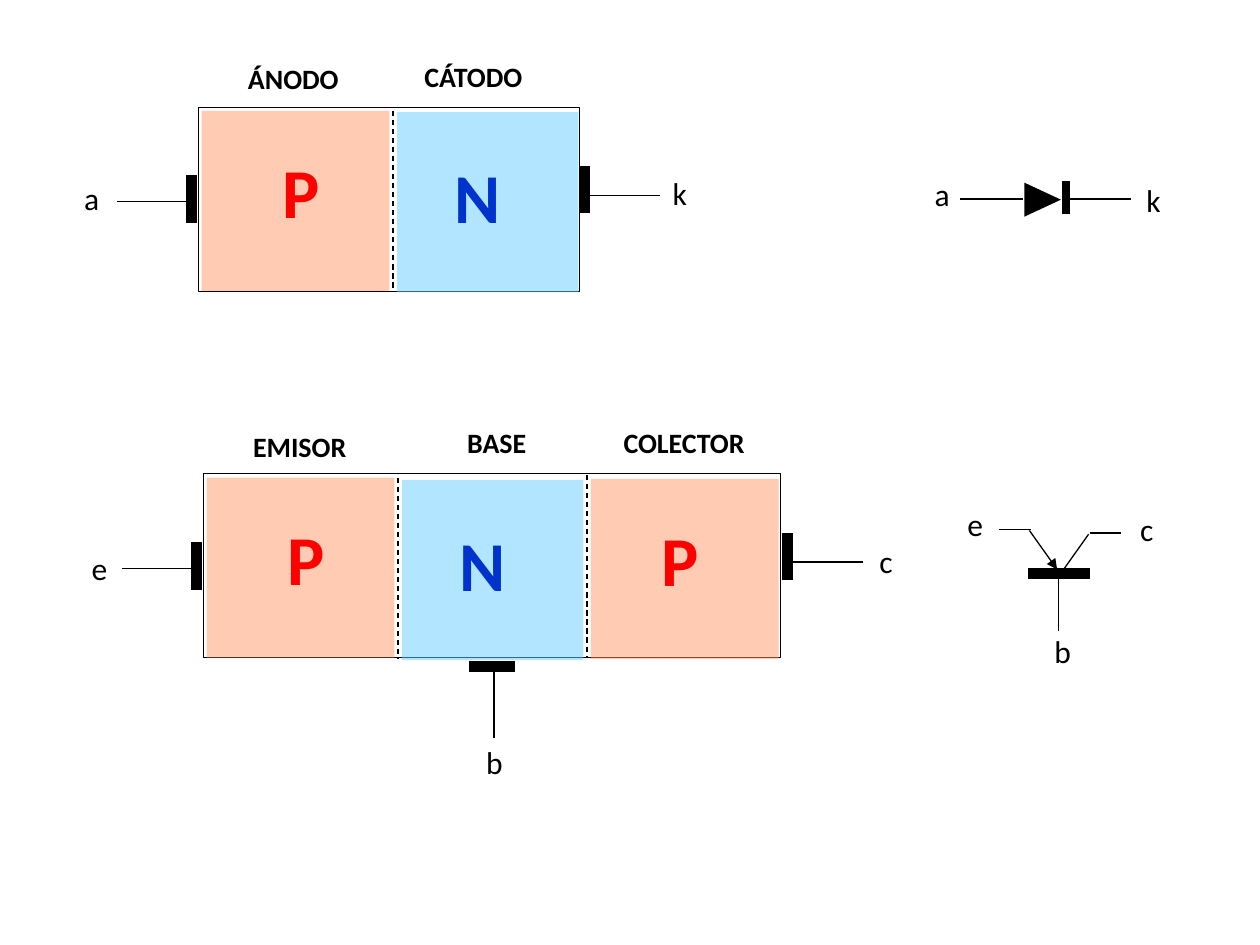
import pptx
import pptx.util
import pptx.dml.color
import pptx.enum.dml
import pptx.enum.shapes
import pptx.enum.text
import pptx.oxml.ns
import lxml.etree

SCALE = 9144  # EMU per px, 100 px to the inch
FONT = "Calibri"
INK = {"black": "000000", "red": "FF0000", "blue": "0033CC",
       "peach": "FF9966", "sky": "66CCFF"}
# Fill, letter colour and letter box width of each doping
KINDS = {"P": ("peach", "red", 50), "N": ("sky", "blue", 57)}
HEIGHTS = {16: 37, 18: 40, 40: 77}  # text box height by point size
KIND = pptx.enum.shapes.MSO_SHAPE


def px(*nums):
    return [pptx.util.Emu(round(n * SCALE)) for n in nums]


def rgb(name):
    return pptx.dml.color.RGBColor.from_string(INK[name])


def tag(node, name, **attrs):
    return lxml.etree.SubElement(node, pptx.oxml.ns.qn(name), **attrs)


def wire(group, x1, y1, x2, y2, width=0.75, dash=False, head=False):
    link = group.shapes.add_connector(
        pptx.enum.shapes.MSO_CONNECTOR.STRAIGHT, *px(x1, y1, x2, y2))
    link.line.width = pptx.util.Pt(width)
    link.line.color.rgb = rgb("black")
    if dash:
        link.line.dash_style = pptx.enum.dml.MSO_LINE.DASH
    if head:
        tag(link.line._get_or_add_ln(), "a:headEnd", type="triangle")
    tag(link._element.spPr, "a:effectLst")


def area(group, x, y, w, h, fill=None, alpha=None, kind=KIND.RECTANGLE):
    shape = group.shapes.add_shape(kind, *px(x, y, w, h))
    shape.shadow.inherit = False
    if fill:
        shape.fill.solid()
        shape.fill.fore_color.rgb = rgb(fill)
        shape.line.fill.background()
        if alpha:
            node = shape._element.spPr.find(".//" + pptx.oxml.ns.qn("a:srgbClr"))
            tag(node, "a:alpha", val=str(alpha * 1000))
    else:
        shape.fill.background()
        shape.line.color.rgb = rgb("black")
        shape.line.width = pptx.util.Pt(0.25)
    return shape


def label(group, x, y, w, text, size=18, color="black", bold=False, wrap=False):
    box = group.shapes.add_textbox(*px(x, y, w, HEIGHTS[size]))
    frame = box.text_frame
    frame.word_wrap = wrap
    frame.auto_size = pptx.enum.text.MSO_AUTO_SIZE.SHAPE_TO_FIT_TEXT
    run = frame.paragraphs[0].add_run()
    run.text = text
    run.font.name = FONT
    run.font.size = pptx.util.Pt(size)
    run.font.bold = bold
    run.font.color.rgb = rgb(color)


def block(group, box, zones, joints, left, right, gap):
    """Doped block with its zones, joints and two side contacts."""
    x, y, w, h = box
    area(group, x, y, w, h)

    # Joints between zones
    for dx, dy in joints:
        wire(group, x + dx, y + dy, x + dx, y + dy + 144, dash=True)

    # Zones, each with a title above and a letter inside
    for kind, dx, dy, zw, inset, title, tx, ty, tw in zones:
        fill, color, lw = KINDS[kind]
        label(group, x + tx, y + ty, tw, title, 16, bold=True)
        area(group, x + dx, y + dy, zw, 143, fill, 50)
        label(group, x + dx + inset, y + dy + (28 if kind == "N" else 25),
              lw, kind, 40, color, True)

    # Left contact
    wire(group, x - 5, y + 92, x - 5, y + 54, 6)
    wire(group, x - 64, y + 75, x - 4, y + 75)
    text, dx, dy = left
    label(group, x + dx, y + dy, 24, text, wrap=True)

    # Right contact
    edge = x + w + gap
    wire(group, edge, y + 84, edge, y + 47, 6)
    wire(group, edge + 1, y + 70, edge + 60, y + 70)
    text, dx, dy = right
    label(group, x + w + dx, y + dy, 32, text)


def stem(group, x, y):
    """Base contact below the transistor block."""
    wire(group, x - 20, y, x + 17, y, 6)
    wire(group, x, y + 57, x, y - 3)
    label(group, x - 16, y + 56, 34, "b")


def diode(group, x, y):
    """Diode symbol, its lead starting at x, y."""
    wire(group, x, y, x + 50, y)
    area(group, x + 52, y - 14, 27, 29, "black",
         kind=KIND.ISOSCELES_TRIANGLE).rotation = 90
    wire(group, x + 84, y - 14, x + 84, y + 12, 4.5)
    wire(group, x + 86, y, x + 136, y)
    label(group, x + 138, y - 19, 32, "k")
    label(group, x - 30, y - 24, 24, "a", wrap=True)


def triode(group, x, y):
    """Transistor symbol, its bar centred at x, y."""
    wire(group, x + 25, y, x - 24, y, 6)
    wire(group, x, y + 4, x, y + 46)
    label(group, x - 13, y + 42, 34, "b")
    # Collector
    wire(group, x + 2, y, x + 24, y - 31)
    wire(group, x + 25, y - 32, x + 50, y - 32)
    label(group, x + 55, y - 55, 31, "c")
    # Emitter
    wire(group, x - 1, y - 3, x - 23, y - 34, head=True)
    wire(group, x - 47, y - 35, x - 22, y - 35)
    label(group, x - 82, y - 59, 33, "e")


def main():
    deck = pptx.Presentation()
    deck.slide_width, deck.slide_height = px(1000, 750)
    slide = deck.slides.add_slide(deck.slide_layouts[6])

    # Diode
    group = slide.shapes.add_group_shape()
    block(group, (157, 85, 303, 146),
          [("P", 3, 3, 149, 54, "ÁNODO", 30, -41, 93),
           ("N", 158, 4, 144, 36, "CÁTODO", 170, -43, 99)],
          [(155, 3)], ("a", -100, 52), ("k", 64, 48), 4)
    diode(group, 762, 158)

    # Transistor
    group = slide.shapes.add_group_shape()
    block(group, (161, 376, 458, 146),
          [("P", 3, 3, 149, 54, "EMISOR", 30, -40, 95),
           ("P", 308, 4, 149, 46, "COLECTOR", 324, -43, 118),
           ("N", 158, 5, 144, 36, "BASE", 200, -43, 68)],
          [(155, 3), (305, 1)], ("e", -98, 55), ("c", 69, 49), 6)
    stem(group, 392, 529)
    triode(group, 840, 455)

    deck.save("out.pptx")


if __name__ == "__main__":
    main()
